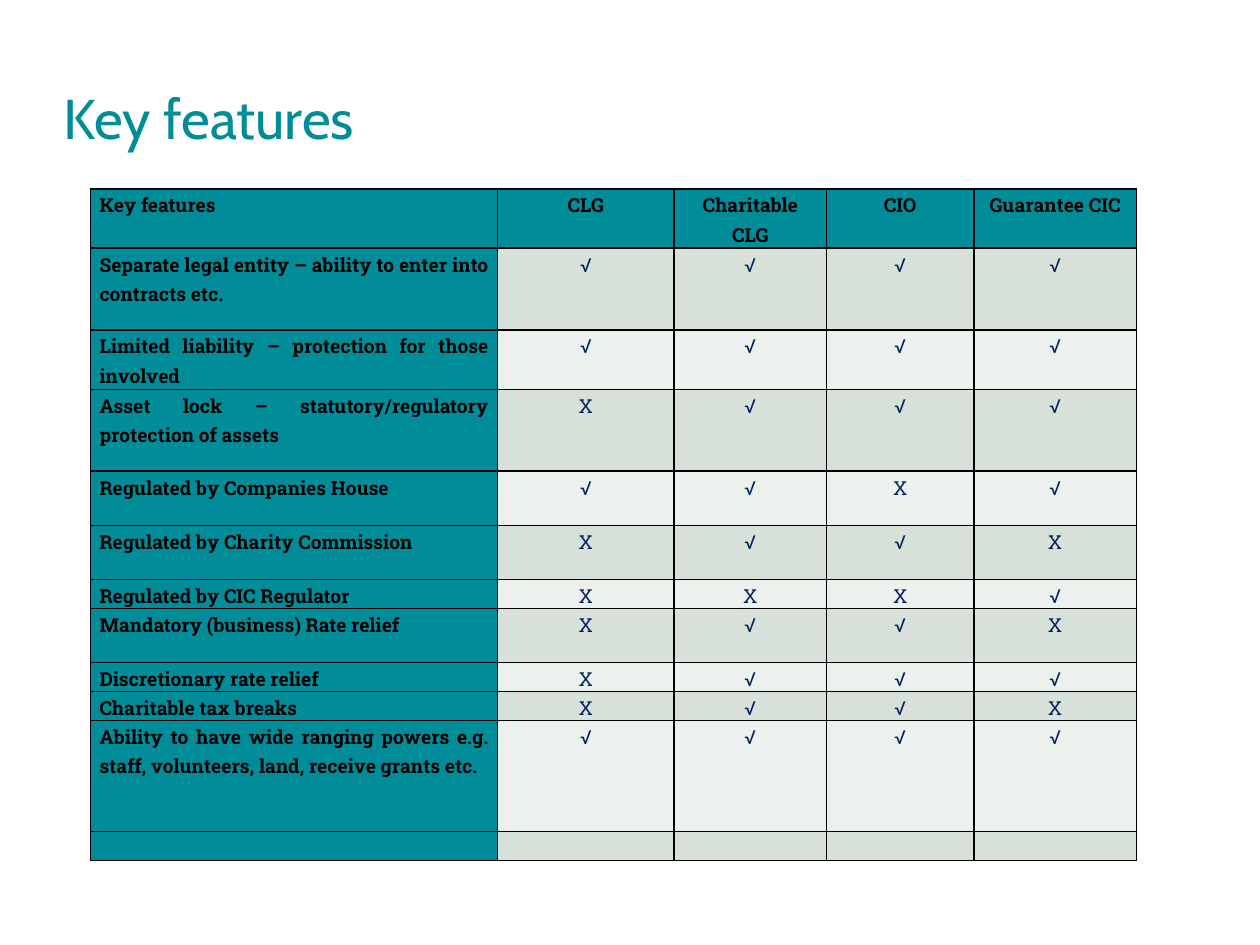
"""Build the slide comparing key features of legal structures."""
from lxml import etree
from pptx import Presentation
from pptx import util as u
from pptx.dml.color import RGBColor
from pptx.enum import text
from pptx.oxml.ns import qn

COLOURS = {"teal": "008C99", "black": "000000", "navy": "002060",
           "sage": "D8E1D9", "pale": "ECF1ED"}
TITLE_FONT, TABLE_FONT = "Cabin", "Roboto Slab"
HEADINGS = ["Key features", "CLG", "Charitable CLG", "CIO", "Guarantee CIC"]
COLUMN_WIDTHS = [3.23, 1.4, 1.21, 1.17, 1.29]
ONE_LINE, ONE_LINE_SPACED, TWO_LINES, TWO_LINES_SPACED = 0.23, 0.43, 0.47, 0.65
FEATURES = [
    ("Separate legal entity – ability to enter into contracts etc.", "√√√√",
     TWO_LINES_SPACED),
    ("Limited liability – protection for those involved", "√√√√", TWO_LINES),
    ("Asset lock – statutory/regulatory protection of assets ", "X√√√",
     TWO_LINES_SPACED),
    ("Regulated by Companies House", "√√X√", ONE_LINE_SPACED),
    ("Regulated by Charity Commission", "X√√X", ONE_LINE_SPACED),
    ("Regulated by CIC Regulator", "XXX√", ONE_LINE),
    ("Mandatory (business) Rate relief", "X√√X", ONE_LINE_SPACED),
    ("Discretionary rate relief", "X√√√", ONE_LINE),
    ("Charitable tax breaks", "X√√X", ONE_LINE),
    ("Ability to have wide ranging powers e.g. staff, volunteers, land, "
     "receive grants etc.", "√√√√", 0.88),
    ("", [""] * 4, ONE_LINE),
]


def colour(name):
    """Return the named colour."""
    return RGBColor.from_string(COLOURS[name])


def add_run(paragraph, words, font, size, ink, bold=False):
    """Add one formatted run to a paragraph."""
    run = paragraph.add_run()
    run.text = words
    run.font.name, run.font.size, run.font.bold = font, u.Pt(size), bold
    run.font.color.rgb = colour(ink)


def add_title(slide, words):
    """Add the slide title."""
    title = slide.shapes.add_textbox(u.Inches(0.41), u.Inches(0.61),
                                     u.Inches(8.94), u.Inches(0.58))
    title.text_frame.word_wrap = True
    add_run(title.text_frame.paragraphs[0], words, TITLE_FONT, 32, "teal")


def add_borders(cell):
    """Draw a thin black line on each side of a cell."""
    properties = cell._tc.get_or_add_tcPr()
    for position, side in enumerate(("lnL", "lnR", "lnT", "lnB")):
        line = etree.Element(qn(f"a:{side}"), w=str(u.Pt(1)))
        fill = etree.SubElement(line, qn("a:solidFill"))
        etree.SubElement(fill, qn("a:srgbClr"), val=COLOURS["black"])
        properties.insert(position, line)


def fill_cell(cell, words, fill, ink, bold, alignment):
    """Set the fill, borders and text of a cell."""
    cell.fill.solid()
    cell.fill.fore_color.rgb = colour(fill)
    add_borders(cell)
    cell.margin_left = cell.margin_right = u.Inches(0.07)
    cell.margin_top = cell.margin_bottom = 0
    paragraph = cell.text_frame.paragraphs[0]
    paragraph.alignment = alignment
    paragraph.line_spacing = 1.15
    paragraph.space_after = u.Pt(6)
    if words:
        add_run(paragraph, words, TABLE_FONT, 11, ink, bold)
    else:
        ending = etree.SubElement(paragraph._p, qn("a:endParaRPr"), sz="1100")
        etree.SubElement(ending, qn("a:latin"), typeface=TABLE_FONT)


def add_features_table(slide):
    """Add the table of features by legal structure."""
    heights = [TWO_LINES] + [height for _, _, height in FEATURES]
    table = slide.shapes.add_table(
        len(heights), len(HEADINGS), u.Inches(0.72), u.Inches(1.5),
        u.Inches(sum(COLUMN_WIDTHS)), u.Inches(sum(heights))).table
    for column, width in zip(table.columns, COLUMN_WIDTHS):
        column.width = u.Inches(width)
    for row, height in zip(table.rows, heights):
        row.height = u.Inches(height)
    align = text.PP_ALIGN
    for index, heading in enumerate(HEADINGS):
        fill_cell(table.cell(0, index), heading, "teal", "black", True,
                  align.CENTER if index else align.LEFT)
    for row, (feature, marks, _) in enumerate(FEATURES, 1):
        fill_cell(table.cell(row, 0), feature, "teal", "black", True, align.JUSTIFY)
        band = "sage" if row % 2 else "pale"
        for column, mark in enumerate(marks, 1):
            fill_cell(table.cell(row, column), mark, band, "navy", False, align.CENTER)


def main():
    """Build and save the slide."""
    deck = Presentation()
    deck.slide_width, deck.slide_height = u.Inches(10), u.Inches(7.5)
    slide = deck.slides.add_slide(deck.slide_layouts[6])
    add_title(slide, "Key features")
    add_features_table(slide)
    deck.save("out.pptx")


if __name__ == "__main__":
    main()
